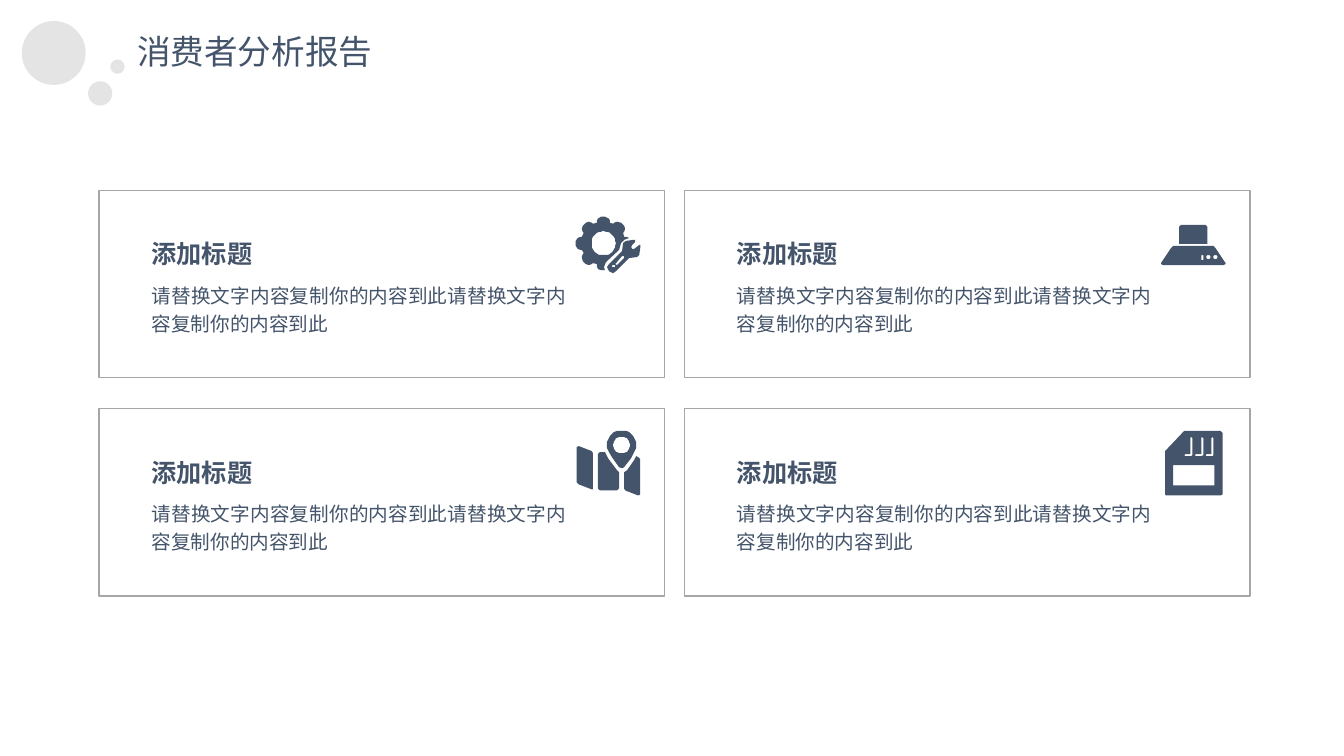
from dataclasses import dataclass
from itertools import product
from math import cos, radians, sin

from lxml import etree
from pptx import Presentation
from pptx.dml.color import RGBColor
from pptx.enum.shapes import MSO_SHAPE
from pptx.enum.text import MSO_ANCHOR, MSO_AUTO_SIZE, PP_ALIGN
from pptx.oxml.ns import qn
from pptx.util import Cm, Pt

RECTANGLE = MSO_SHAPE.RECTANGLE
CONNECTOR_DOT = MSO_SHAPE.FLOWCHART_CONNECTOR
LEFT, JUSTIFY = PP_ALIGN.LEFT, PP_ALIGN.JUSTIFY
TOP = MSO_ANCHOR.TOP
NO_AUTOFIT = MSO_AUTO_SIZE.NONE
TITLE_ONLY = 5


@dataclass(frozen=True)
class Theme:
    font: str = "Noto Sans CJK SC"
    ink: RGBColor = RGBColor(0x44, 0x54, 0x6A)
    border: RGBColor = RGBColor(0xA6, 0xA6, 0xA6)
    bubble: RGBColor = RGBColor(0xD9, 0xD9, 0xD9)
    bubble_alpha: int = 70000
    title_size: int = 24
    heading_size: int = 18
    body_size: int = 14


@dataclass(frozen=True)
class Box:
    left: float
    top: float
    width: float
    height: float

    def inner(self, left, top, width, height):
        return Box(self.left + left, self.top + top, width, height)

    def lengths(self):
        return [Cm(value) for value in (self.left, self.top, self.width, self.height)]


THEME = Theme()
ICON_UNIT = Cm(0.0254)


def arc(x, y, radius, start=0, end=360, step=10):
    angles = [radians(angle) for angle in range(start, end + 1, step)]
    return [(x + radius * cos(angle), y + radius * sin(angle)) for angle in angles]


def rectangle(left, top, right, bottom):
    return [(left, top), (right, top), (right, bottom), (left, bottom)]


def contact(x):
    hook = [(1, 17), (6, 17), (6, 1), (7, 0), (8, 1), (8, 18), (7, 19), (1, 19), (0, 18)]
    return [(x + dx, 6 + dy) for dx, dy in hook]


GEAR_AND_WRENCH = [
    [(25, 4), (29, 4), (33, 5.5), (34, 8), (34, 10), (37, 11), (38, 10), (41, 9), (45, 10),
     (48, 13), (49, 16), (48, 19), (47, 20), (48, 24), (50, 24), (53, 25), (48, 27),
     (45, 30), (43, 37), (30, 49), (28, 54), (29, 57), (25, 57), (22, 55.5), (21, 53),
     (21, 51), (17, 50), (16, 51), (13, 52), (10, 51), (7, 48), (6, 44.5), (7, 41), (8, 40),
     (6, 37), (5, 37), (1.5, 36), (0, 33), (0, 28), (1.5, 25), (5, 24), (6, 24), (8, 20),
     (7, 19), (6, 16), (7, 13), (10, 10), (13, 9), (16, 10), (17, 11), (21, 10), (21, 8),
     (22, 5.5)],
    arc(27.5, 30.5, 12),
    [(57, 27), (59, 27), (59, 29), (55.5, 32), (55, 34), (56, 36), (58, 36), (63, 32),
     (64, 32), (64.5, 35), (63, 42), (61, 44), (53, 45), (40, 58), (37, 60), (33, 58),
     (31, 54), (33, 51), (46, 38), (47, 30), (50, 28)],
    [(46, 43), (48, 43), (48, 45), (41, 52), (39, 51), (40, 50)],
    arc(37.5, 53, 1.5),
]
COOKER_HOOD = [
    [(12, 33), (52, 33), (54, 35), (64, 50), (64, 51), (62, 52), (2, 52), (0, 51),
     (0, 50), (10, 35)],
    [(20, 12), (44, 12), (46, 14), (46, 31), (18, 31), (18, 14)],
    rectangle(40, 42, 42, 47),
    arc(47, 44, 2),
    arc(54, 44, 2),
]
MAP_AND_PIN = [
    [(3, 15), (16, 20), (17, 22), (17, 58), (16, 58), (3, 53), (1, 51), (1, 16)],
    [(24, 21), (29, 21), (32, 27), (41, 39), (43, 41), (43, 57), (41, 59), (24, 59),
     (22, 57), (22, 23)],
    [(60, 25), (62, 26), (64, 28), (64, 63), (62, 64), (49, 59), (48, 57), (48, 41),
     (51, 39), (58, 29)],
    arc(45.5, 14, 14.5, 150, 390) + [(55, 27), (48, 36), (45.5, 37), (43, 36), (36, 26)],
    arc(45.5, 14, 8.5),
]
MEMORY_CARD = [
    [(23, 0), (59, 0), (61, 2), (61, 63), (59, 64), (5, 64), (4, 63), (4, 20), (22, 1)],
    rectangle(12, 34, 53, 54),
    *[contact(23 + 10.5 * index) for index in range(3)],
]

HEADING = "添加标题"
BODY = "请替换文字内容复制你的内容到此请替换文字内容复制你的内容到此"
CARDS = [
    (HEADING, BODY, GEAR_AND_WRENCH),
    (HEADING, BODY, COOKER_HOOD),
    (HEADING, BODY, MAP_AND_PIN),
    (HEADING, BODY, MEMORY_CARD),
]


def apply(target, values):
    for name, value in values.items():
        setattr(target, name, value)


def write_text(shape, text, size, bold=False, align=LEFT, spacing=1.0, wrap=True):
    frame = shape.text_frame
    apply(frame, {"word_wrap": wrap, "auto_size": NO_AUTOFIT, "vertical_anchor": TOP})
    para = frame.paragraphs[0]
    apply(para, {"alignment": align, "line_spacing": spacing})
    span = para.add_run()
    span.text = text
    apply(span.font, {"size": Pt(size), "bold": bold, "name": THEME.font})
    span.font.color.rgb = THEME.ink
    east_asian = etree.SubElement(span.font._element, qn("a:ea"))
    east_asian.set("typeface", THEME.font)


def fill_solid(shape, color):
    shape.shadow.inherit = False
    shape.fill.solid()
    shape.fill.fore_color.rgb = color
    shape.line.fill.background()


def draw_header(page, box, title):
    for left, top, size in [(0, 0, 1.61), (1.67, 1.52, 0.61), (2.23, 0.97, 0.36)]:
        bubble = page.shapes.add_shape(
            CONNECTOR_DOT, *box.inner(left, top, size, size).lengths())
        fill_solid(bubble, THEME.bubble)
        color = bubble._element.spPr.find(".//" + qn("a:srgbClr"))
        etree.SubElement(color, qn("a:alpha")).set("val", str(THEME.bubble_alpha))
    heading = page.shapes.title
    place = box.inner(2.65, 0.13, 6.5, 1.28).lengths()
    apply(heading, dict(zip(("left", "top", "width", "height"), place)))
    write_text(heading, title, THEME.title_size, wrap=False)


def draw_icon(page, box, contours):
    first, *others = contours
    builder = page.shapes.build_freeform(*first[0], scale=ICON_UNIT)
    builder.add_line_segments(first[1:], close=True)
    for contour in others:
        builder.move_to(*contour[0])
        builder.add_line_segments(contour[1:], close=True)
    fill_solid(builder.convert_to_shape(Cm(box.left), Cm(box.top)), THEME.ink)


def draw_card(page, box, heading, body, icon):
    outline = page.shapes.add_shape(RECTANGLE, *box.lengths())
    outline.shadow.inherit = False
    outline.fill.background()
    outline.line.color.rgb = THEME.border
    outline.line.width = Pt(1)
    draw_icon(page, box.inner(12.01, 0.56, 1.63, 1.63), icon)
    for text, size, bold, top, width, height in [
        (body, THEME.body_size, False, 2.11, 10.95, 1.7),
        (heading, THEME.heading_size, True, 0.94, 5.69, 1.14),
    ]:
        label = page.shapes.add_textbox(*box.inner(1.07, top, width, height).lengths())
        write_text(label, text, size, bold, JUSTIFY, 1.2)


def draw_card_grid(page, box, cards):
    card_width, card_height = 14.25, 4.72
    column_step = box.width - card_width
    row_step = box.height - card_height
    for (row, column), card in zip(product(range(2), repeat=2), cards):
        place = box.inner(column * column_step, row * row_step, card_width, card_height)
        draw_card(page, place, *card)


def main():
    deck = Presentation()
    apply(deck, {"slide_width": Cm(33.87), "slide_height": Cm(19.05)})
    page = deck.slides.add_slide(deck.slide_layouts[TITLE_ONLY])
    draw_header(page, Box(0.55, 0.53, 9.2, 2.13), "消费者分析报告")
    draw_card_grid(page, Box(2.5, 4.8, 29, 10.22), CARDS)
    deck.save("out.pptx")


if __name__ == "__main__":
    main()
